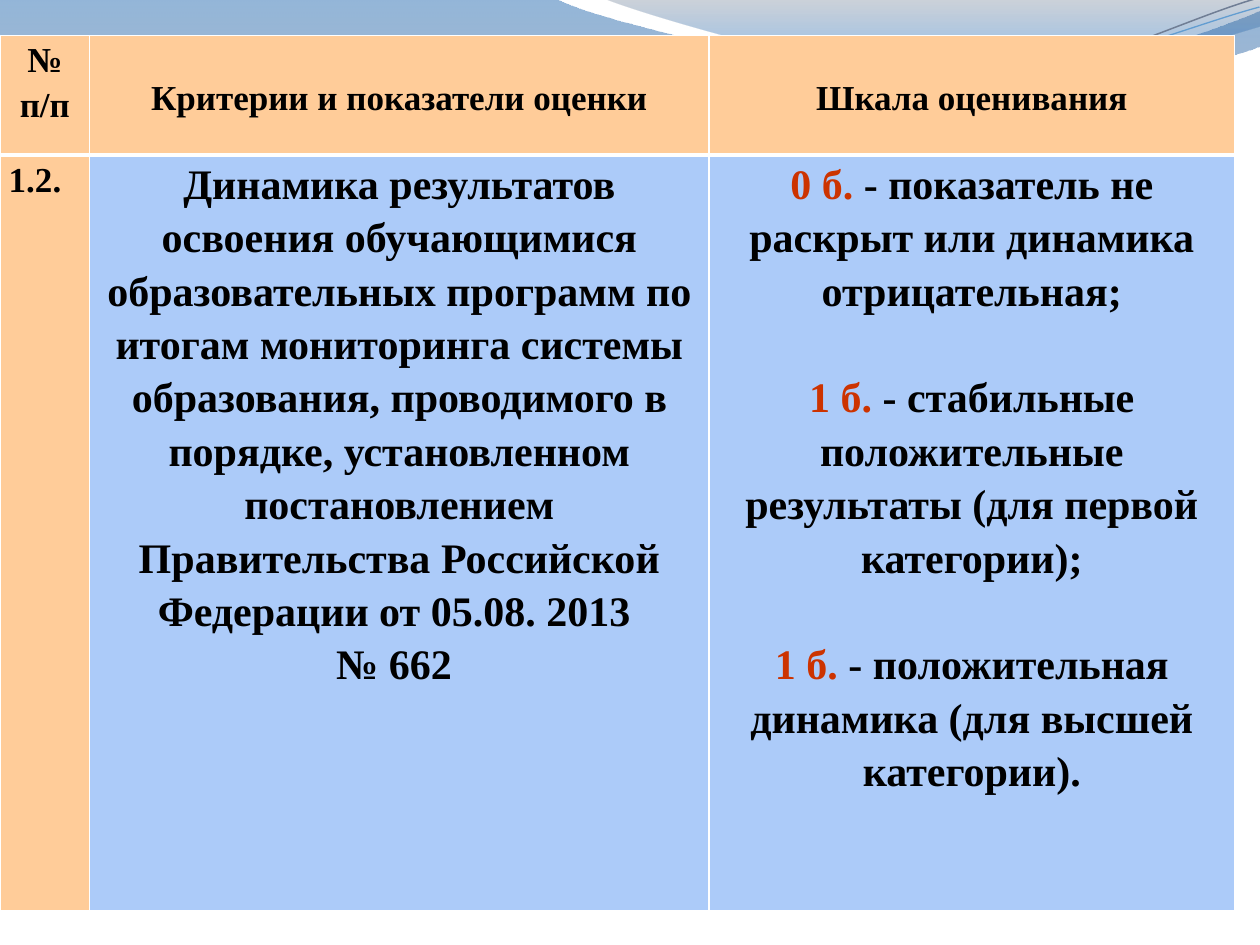
from lxml.etree import Element, SubElement
from pptx import Presentation
from pptx.dml.color import RGBColor
from pptx.enum.text import MSO_ANCHOR, PP_ALIGN
from pptx.oxml.ns import qn
from pptx.util import Pt

BLACK = RGBColor(0x00, 0x00, 0x00)
WHITE = RGBColor(0xFF, 0xFF, 0xFF)
RED = RGBColor(0xCC, 0x33, 0x00)
PEACH = RGBColor(0xFF, 0xCC, 0x99)
SKY = RGBColor(0xAC, 0xCB, 0xF9)
NAVY = RGBColor(0x12, 0x5E, 0xAA)
SLATE = RGBColor(0x69, 0x7F, 0xA4)
STEEL = RGBColor(0x59, 0x69, 0x82)
AZURE = RGBColor(0x06, 0x70, 0xDA)
GREY_LINE = RGBColor(0x70, 0x7E, 0x95)
BLUE_LINE = RGBColor(0x62, 0x9D, 0xD1)

FONT = "Times New Roman"
LINE_ROTATION = 357.3

WAVE_BANDS = [
    ([(0, -1), (317, -1),
      (343, 12, 478, 45, 546, 45), (614, 45, 690, 19, 720, 6), (721, 26),
      (708, 32, 626, 55, 537, 54), (447, 53, 275, 20, 185, 24),
      (93, 25, 33, 60, -1, 81)],
     [(0, NAVY, 45), (100, SLATE, 55)]),
    ([(345, -1), (366, 8, 491, 45, 554, 47), (616, 49, 692, 23, 720, 15),
      (720, 0)],
     [(0, STEEL, 30), (80, AZURE, 45)]),
]
WAVE_LINES = [
    ([(-1, 63), (34, 52, 114, 29, 199, 29), (284, 30, 426, 67, 512, 65),
      (599, 62, 676, 26, 720, 16)], GREY_LINE, 0.85),
    ([(-1, 58), (33, 54, 118, 33, 204, 33), (290, 34, 429, 63, 515, 61),
      (601, 59, 679, 30, 721, 21)], BLUE_LINE, 0.75),
]

HEADINGS = ["Критерии и показатели оценки", "Шкала оценивания"]
CRITERION = (
    "Динамика результатов освоения обучающимися образовательных программ "
    "по итогам мониторинга системы образования, проводимого в порядке, "
    "установленном постановлением Правительства Российской Федерации "
    "от 05.08. 2013 \n№ 662 "
)
SCALE = [
    ("0 б.", " - показатель не раскрыт или динамика отрицательная;"),
    ("1 б.", " - стабильные положительные результаты (для первой категории);"),
    ("1 б.", " - положительная динамика (для высшей категории)."),
]


def add_wave(slide, left, top, segments, close):
    ends = [(Pt(left + segment[-2]), Pt(top + segment[-1])) for segment in segments]
    builder = slide.shapes.build_freeform(*ends[0])
    builder.add_line_segments(ends[1:], close=close)
    shape = builder.convert_to_shape()
    shape.shadow.inherit = False
    steps = list(shape._element.iter(qn("a:lnTo")))
    for step, segment in zip(steps, segments[1:]):
        if len(segment) == 2:
            continue
        step.tag = qn("a:cubicBezTo")
        for index, (x, y) in enumerate((segment[:2], segment[2:4])):
            control = Element(qn("a:pt"), x=str(Pt(left + x) - shape.left),
                              y=str(Pt(top + y) - shape.top))
            step.insert(index, control)
    return shape


def set_gradient(shape, stops):
    shape.fill.gradient()
    shape.fill.gradient_angle = 270
    stop_list = shape.fill._fill._gradFill.find(qn("a:gsLst"))
    for old_stop in list(stop_list):
        stop_list.remove(old_stop)
    for position, color, opacity in stops:
        stop = SubElement(stop_list, qn("a:gs"), pos=str(position * 1000))
        fill_color = SubElement(stop, qn("a:srgbClr"), val=str(color))
        SubElement(fill_color, qn("a:alpha"), val=str(opacity * 1000))


def add_wave_header(slide, master, left, top):
    bands = []
    for segments, stops in WAVE_BANDS:
        band = add_wave(slide, left, top, segments, True)
        set_gradient(band, stops)
        band.line.fill.background()
        bands.append(band)
    lines = []
    for segments, color, width in WAVE_LINES:
        line = add_wave(slide, left, top, segments, False)
        line.fill.background()
        line.line.color.rgb = color
        line.line.width = Pt(width)
        line.rotation = LINE_ROTATION
        lines.append(line)
    group = slide.shapes.add_group_shape(lines)
    for index, shape in enumerate(bands + [group], start=2):
        master.shapes._spTree.insert(index, shape._element)


def set_borders(cell, widths):
    properties = cell._tc.get_or_add_tcPr()
    for side, width in zip("LRTB", widths):
        border = SubElement(properties, qn(f"a:ln{side}"), w=str(Pt(width)))
        fill = SubElement(border, qn("a:solidFill"))
        SubElement(fill, qn("a:srgbClr"), val=str(WHITE))


def fill_cell(cell, paragraphs, size, color, align=PP_ALIGN.CENTER,
              anchor=MSO_ANCHOR.TOP, gap=0):
    cell.margin_left = cell.margin_right = Pt(5)
    cell.margin_top = cell.margin_bottom = Pt(0)
    cell.vertical_anchor = anchor
    cell.fill.solid()
    cell.fill.fore_color.rgb = color
    for index, runs in enumerate(paragraphs):
        frame = cell.text_frame
        paragraph = frame.add_paragraph() if index else frame.paragraphs[0]
        paragraph.alignment = align
        paragraph.line_spacing = 1.15
        if index and gap:
            paragraph.space_before = Pt(gap)
        paragraph.text = runs[0]
        for text in runs[1:]:
            paragraph.add_run().text = text
        for run in paragraph.runs:
            run.font.name = FONT
            run.font.size = Pt(size)
            run.font.bold = True
            run.font.color.rgb = BLACK
        if len(runs) > 1:
            paragraph.runs[0].font.color.rgb = RED


def add_criteria_table(slide, left, top, width, height):
    frame = slide.shapes.add_table(2, 3, Pt(left), Pt(top), Pt(width), Pt(height))
    table = frame.table
    table.first_row = table.horz_banding = False
    number_width, criterion_width, header_height = 51.3, 353.8, 68.2
    column_widths = (number_width, criterion_width,
                     width - number_width - criterion_width)
    for column, column_width in zip(table.columns, column_widths):
        column.width = Pt(column_width)
    for row, row_height in zip(table.rows, (header_height, height - header_height)):
        row.height = Pt(row_height)
    for row_index, widths in enumerate([(1, 1, 1, 3), (1, 1, 3, 1)]):
        for column_index in range(3):
            set_borders(table.cell(row_index, column_index), widths)

    fill_cell(table.cell(0, 0), [("№",), ("п/п",)], 20, PEACH)
    for column_index, heading in enumerate(HEADINGS, start=1):
        fill_cell(table.cell(0, column_index), [(heading,)], 20, PEACH,
                  anchor=MSO_ANCHOR.MIDDLE)
    fill_cell(table.cell(1, 0), [("1.2.",)], 20, PEACH, align=PP_ALIGN.LEFT)
    fill_cell(table.cell(1, 1), [(CRITERION,)], 24, SKY)
    fill_cell(table.cell(1, 2), SCALE, 24, SKY, gap=30.5)


def main():
    presentation = Presentation()
    presentation.slide_width = Pt(720)
    presentation.slide_height = Pt(540)
    slide = presentation.slides.add_slide(presentation.slide_layouts[6])
    slide.background.fill.solid()
    slide.background.fill.fore_color.rgb = WHITE
    add_wave_header(slide, presentation.slide_master, 0, 0)
    add_criteria_table(slide, 0, 20.4, 705.6, 500)
    presentation.save("out.pptx")


if __name__ == "__main__":
    main()
